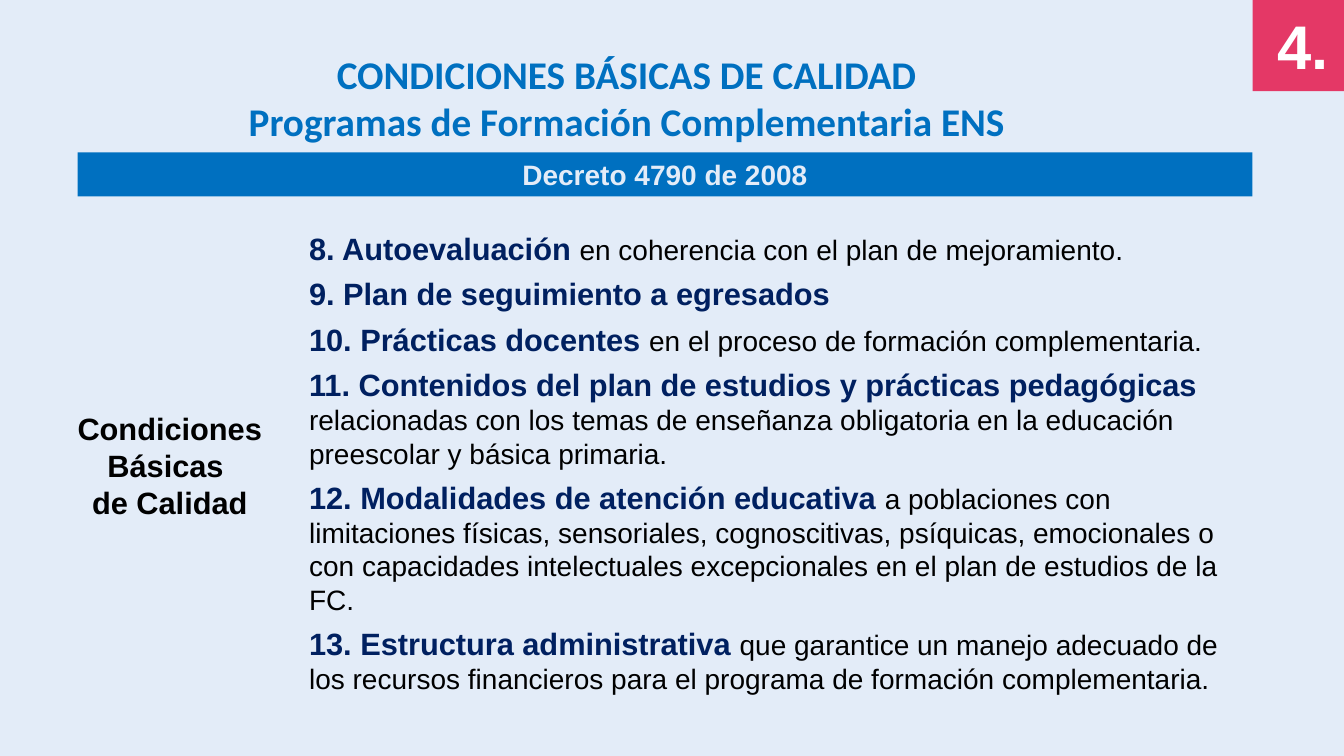
from pptx import Presentation
from pptx.dml.color import RGBColor
from pptx.enum.shapes import MSO_SHAPE as Shape
from pptx.enum.text import MSO_ANCHOR as Anchor, PP_ALIGN as Align
from pptx.util import Cm, Pt

PALE = RGBColor(0xE3, 0xEC, 0xF8)
PINK = RGBColor(0xE4, 0x38, 0x66)
BLUE = RGBColor(0x00, 0x70, 0xC0)
NAVY = RGBColor(0x00, 0x20, 0x60)
BLACK = RGBColor(0x00, 0x00, 0x00)
WHITE = RGBColor(0xFF, 0xFF, 0xFF)

CONDITIONS = [
    ("8. Autoevaluación ", "en coherencia con el plan de mejoramiento."),
    ("9. Plan de seguimiento a egresados", ""),
    ("10. Prácticas docentes ", "en el proceso de formación complementaria."),
    ("11. Contenidos del plan de estudios y prácticas pedagógicas ",
     "relacionadas con los temas de enseñanza obligatoria en la educación "
     "preescolar y básica primaria."),
    ("12. Modalidades de atención educativa ",
     "a poblaciones con limitaciones físicas, sensoriales, cognoscitivas, "
     "psíquicas, emocionales o con capacidades intelectuales excepcionales "
     "en el plan de estudios de la FC."),
    ("13. Estructura administrativa ",
     "que garantice un manejo adecuado de los recursos financieros para el "
     "programa de formación complementaria."),
]


class Deck:
    """Hold the slide and its text style, and add each kind of element."""

    def __init__(self, font, background):
        self.font = font
        self.prs = Presentation()
        self.prs.slide_width, self.prs.slide_height = Cm(33.87), Cm(19.05)
        self.s = self.prs.slides.add_slide(self.prs.slide_layouts[6])
        fill = self.s.background.fill
        fill.solid()
        fill.fore_color.rgb = background

    def run(self, p, text, size, color, bold=True, font=None):
        r = p.add_run()
        r.text = text
        r.font.name = font or self.font
        r.font.size = Pt(size)
        r.font.bold = bold
        r.font.color.rgb = color

    def lines(self, tf, texts, size, color, align=Align.CENTER, font=None):
        for i, text in enumerate(texts):
            p = tf.add_paragraph() if i else tf.paragraphs[0]
            p.alignment = align
            self.run(p, text, size, color, font=font)

    def rect(self, x, y, w, h, color):
        sp = self.s.shapes.add_shape(Shape.RECTANGLE, Cm(x), Cm(y), Cm(w), Cm(h))
        sp.shadow.inherit = False
        sp.fill.solid()
        sp.fill.fore_color.rgb = color
        sp.line.fill.background()
        sp.text_frame.vertical_anchor = Anchor.MIDDLE
        return sp.text_frame

    def box(self, x, y, w, h):
        tf = self.s.shapes.add_textbox(Cm(x), Cm(y), Cm(w), Cm(h)).text_frame
        tf.word_wrap = True
        return tf

    def items(self, tf, pairs):
        for i, (lead, detail) in enumerate(pairs):
            p = tf.add_paragraph() if i else tf.paragraphs[0]
            p.space_after = Pt(6 if i < len(pairs) - 1 else 0)
            self.run(p, lead, 22, NAVY)
            if detail:
                self.run(p, detail, 20, BLACK, bold=False)


def main():
    deck = Deck("Arial", PALE)
    deck.rect(31.57, 0, 2.3, 2.3, PINK)
    deck.lines(deck.box(31.95, 0.08, 1.92, 2.13), ["4."], 44, WHITE, Align.LEFT)
    deck.lines(deck.rect(1.96, 3.84, 29.6, 1.11, BLUE),
               ["Decreto 4790 de 2008"], 20, PALE)
    deck.lines(deck.box(1.96, 1.14, 27.66, 2.65),
               ["CONDICIONES BÁSICAS DE CALIDAD",
                "Programas de Formación Complementaria ENS"],
               28, BLUE, font="Calibri")
    deck.lines(deck.box(0.48, 10.19, 7.6, 3.07),
               ["Condiciones", "Básicas ", "de Calidad"], 22, BLACK)
    deck.items(deck.box(7.54, 5.66, 24.03, 12.1), CONDITIONS)
    deck.prs.save("out.pptx")


if __name__ == "__main__":
    main()
